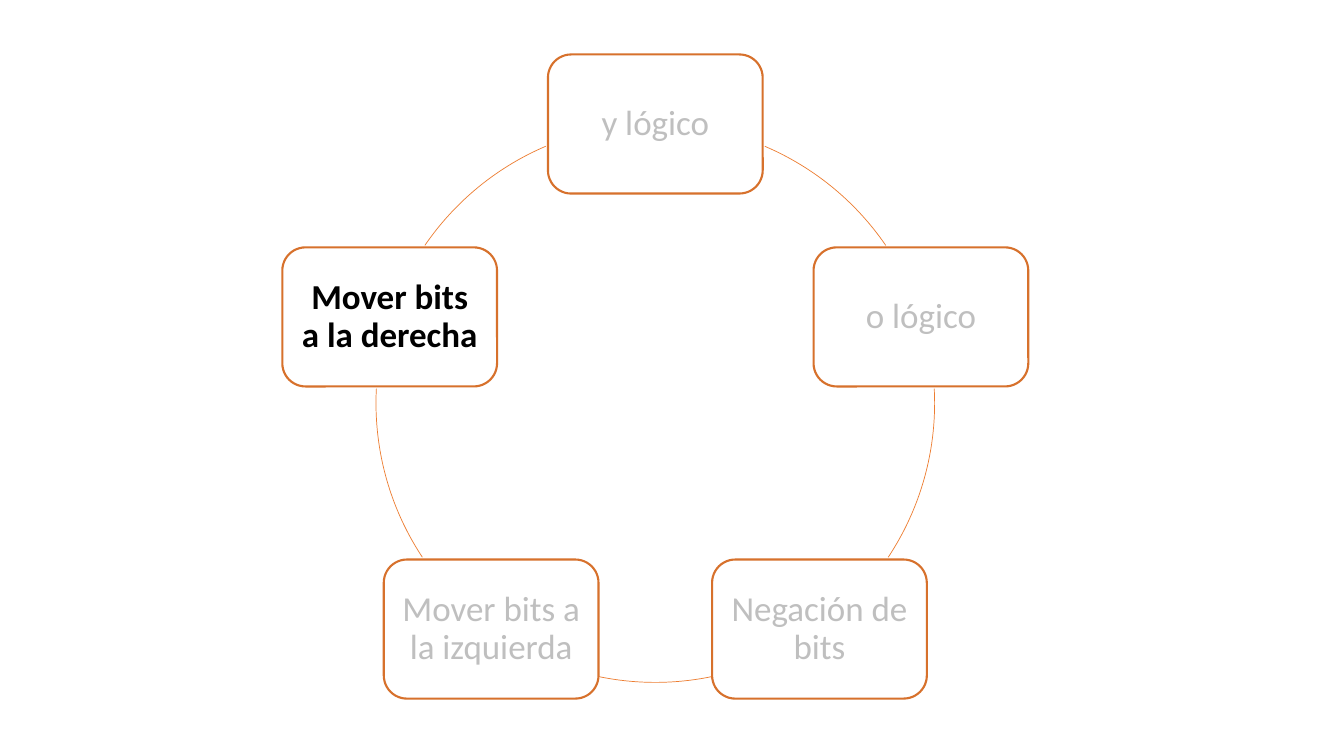
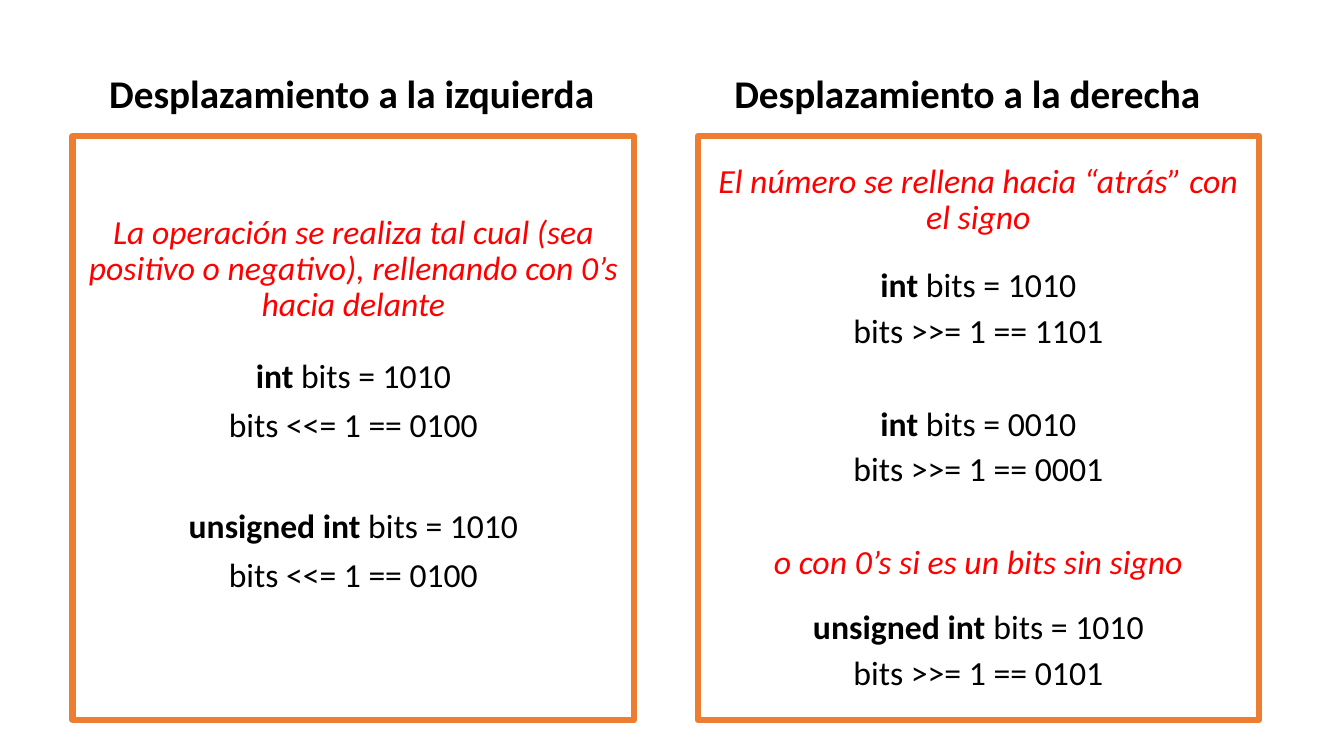
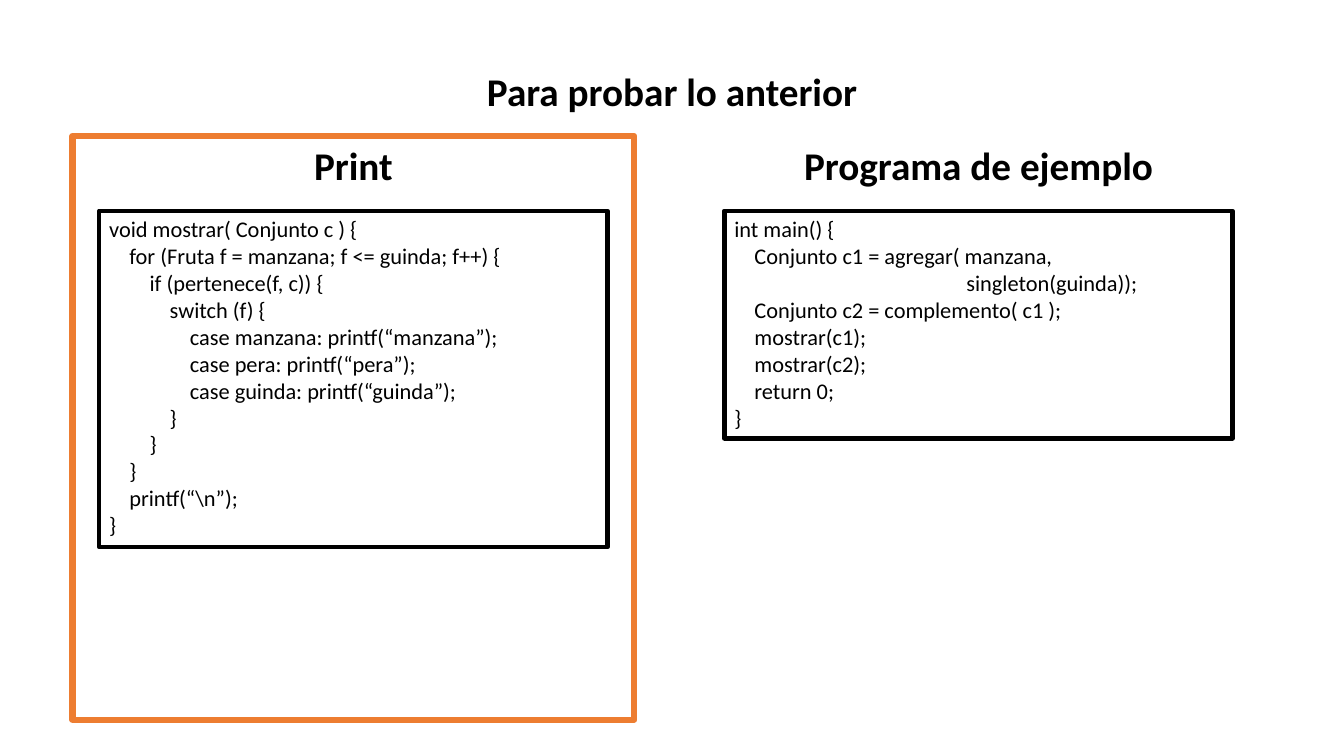
from dataclasses import dataclass
from math import cos, radians, sin
from typing import NamedTuple

from pptx import Presentation
from pptx.dml.color import RGBColor
from pptx.enum.shapes import MSO_SHAPE
from pptx.enum.text import MSO_ANCHOR, MSO_AUTO_SIZE, PP_ALIGN
from pptx.util import Inches, Pt

# Shared style
FONT = "Calibri"
BLACK = RGBColor(0x00, 0x00, 0x00)
WHITE = RGBColor(0xFF, 0xFF, 0xFF)
GREY = RGBColor(0xBF, 0xBF, 0xBF)
RED = RGBColor(0xFF, 0x00, 0x00)
ORANGE = RGBColor(0xED, 0x7D, 0x31)
RUST = RGBColor(0xD7, 0x71, 0x2C)

# Two-column grid, in inches
WIDE, HIGH = 13.33, 7.5
LEFT, PITCH = 0.72, 6.2
PANEL_W, PANEL_H, PANEL_Y = 5.57, 5.79, 1.35
HEAD_W, HEAD_H, HEAD_Y = 5.04, 0.57, 0.64
INSET = (PANEL_W - HEAD_W) / 2
CODE_Y, CODE_ROW = 2.09, 0.27

# Ring of operations
MID_X, MID_Y, RADIUS = 6.5, 4.0, 2.77
NODE_W, NODE_H = 2.13, 1.38


class Rect(NamedTuple):
    x: float
    y: float
    w: float
    h: float

    def emu(self) -> tuple:
        return tuple(Inches(side) for side in self)


class Arc(NamedTuple):
    """Clockwise angles in degrees, counted from the top."""
    start: float
    end: float


@dataclass
class Line:
    """A paragraph: optional bold keyword, then text; red ones are remarks."""
    text: str
    gap: float = 9.5
    key: str = ""
    note: bool = False


@dataclass
class Panel:
    col: int
    head: str
    lines: list[Line]
    size: float
    tight: float
    foot: float


@dataclass
class Code:
    col: int
    head: str
    text: str


NODES = ["y lógico", "o lógico", "Negación de bits",
         "Mover bits a la izquierda", "Mover bits a la derecha"]
ACTIVE = NODES[-1]
ARCS = [Arc(23.1, 55.6), Arc(87, 123.5), Arc(168.4, 191.6),
        Arc(236.5, 273), Arc(304.4, 336.9)]

PANELS = [
    Panel(0, "Desplazamiento a la izquierda", [
        Line("La operación se realiza tal cual (sea positivo o negativo), "
             "rellenando con 0’s hacia delante", 0, note=True),
        Line(" bits = 1010", 25, "int"),
        Line("bits <<= 1 == 0100"),
        Line(" bits = 1010", 46, "unsigned int"),
        Line("bits <<= 1 == 0100"),
    ], 24, 0.9, 0.5),
    Panel(1, "Desplazamiento a la derecha", [
        Line("El número se rellena hacia “atrás” con el signo", 0, note=True),
        Line(" bits = 1010", 25, "int"),
        Line("bits >>= 1 == 1101"),
        Line(" bits = 0010", 43, "int"),
        Line("bits >>= 1 == 0001"),
        Line("o con 0’s si es un bits sin signo", 43, note=True),
        Line(" bits = 1010", 23.5, "unsigned int"),
        Line("bits >>= 1 == 0101"),
    ], 24.1, 0.8, 0.05),
]

CODES = [
    Code(0, "Print", """\
void mostrar( Conjunto c ) {
    for (Fruta f = manzana; f <= guinda; f++) {
        if (pertenece(f, c)) {
            switch (f) {
                case manzana: printf(“manzana”);
                case pera: printf(“pera”);
                case guinda: printf(“guinda”);
            }
        }
    }
    printf(“\\n”);
}"""),
    Code(1, "Programa de ejemplo", """\
int main() {
    Conjunto c1 = agregar( manzana,
                                              singleton(guinda));
    Conjunto c2 = complemento( c1 );
    mostrar(c1);
    mostrar(c2);
    return 0;
}"""),
]


def col_x(col: int) -> float:
    return LEFT + col * PITCH


def style(para, size: float, color: RGBColor, bold: bool | None = None,
          align=PP_ALIGN.CENTER) -> None:
    para.alignment = align
    font = para.font
    font.name, font.size, font.bold = FONT, Pt(size), bold
    font.color.rgb = color


def add_box(slide, kind, rect: Rect, line: RGBColor, width: float,
            fill: RGBColor | None = WHITE):
    box = slide.shapes.add_shape(kind, *rect.emu())
    box.shadow.inherit = False
    if fill is None:
        box.fill.background()
    else:
        box.fill.solid()
        box.fill.fore_color.rgb = fill
    box.line.color.rgb = line
    box.line.width = Pt(width)
    return box


def add_frame(slide, col: int):
    rect = Rect(col_x(col), PANEL_Y, PANEL_W, PANEL_H)
    return add_box(slide, MSO_SHAPE.RECTANGLE, rect, ORANGE, 4.5)


def set_head(shape, text: str, align=PP_ALIGN.CENTER) -> None:
    frame = shape.text_frame
    frame.word_wrap = True
    frame.auto_size = MSO_AUTO_SIZE.NONE
    frame.vertical_anchor = MSO_ANCHOR.TOP
    frame.text = text
    style(frame.paragraphs[0], 28, BLACK, True, align)


def add_head(slide, col: int, y: float, text: str,
             align=PP_ALIGN.CENTER) -> None:
    rect = Rect(col_x(col) + INSET, y, HEAD_W, HEAD_H)
    set_head(slide.shapes.add_textbox(*rect.emu()), text, align)


def add_node(slide, index: int, text: str) -> None:
    turn = radians(index * 360 / len(NODES))
    rect = Rect(MID_X + RADIUS * sin(turn) - NODE_W / 2,
                MID_Y - RADIUS * cos(turn) - NODE_H / 2, NODE_W, NODE_H)
    node = add_box(slide, MSO_SHAPE.ROUNDED_RECTANGLE, rect, RUST, 1.5)
    frame = node.text_frame
    frame.word_wrap = True
    frame.vertical_anchor = MSO_ANCHOR.MIDDLE
    frame.margin_left = frame.margin_right = Inches(0.1)
    frame.margin_top = frame.margin_bottom = Inches(0.1)
    frame.text = text
    para = frame.paragraphs[0]
    para.line_spacing = 0.9
    live = text == ACTIVE
    style(para, 25, BLACK if live else GREY, live)


def add_arc(slide, arc: Arc) -> None:
    rect = Rect(MID_X - RADIUS, MID_Y - RADIUS, 2 * RADIUS, 2 * RADIUS)
    curve = add_box(slide, MSO_SHAPE.ARC, rect, ORANGE, 0.5, None)
    # Preset angles start at three o'clock; 0.6 per degree
    for i, angle in enumerate(arc):
        curve.adjustments[i] = (angle - 90) % 360 * 0.6


def add_panel(slide, panel: Panel) -> None:
    frame = add_frame(slide, panel.col).text_frame
    frame.word_wrap = True
    frame.vertical_anchor = MSO_ANCHOR.MIDDLE
    frame.margin_bottom = Inches(panel.foot)
    for i, line in enumerate(panel.lines):
        para = frame.add_paragraph() if i else frame.paragraphs[0]
        if line.key:
            key = para.add_run()
            key.text, key.font.bold = line.key, True
        para.add_run().text = line.text
        style(para, panel.size, RED if line.note else BLACK)
        para.font.italic = line.note
        para.space_before = Pt(line.gap)
        para.line_spacing = panel.tight if i else 0.9
    add_head(slide, panel.col, HEAD_Y, panel.head, PP_ALIGN.LEFT)


def add_code(slide, code: Code) -> None:
    add_head(slide, code.col, PANEL_Y, code.head)
    rows = code.text.split("\n")
    rect = Rect(col_x(code.col) + INSET, CODE_Y, HEAD_W,
                len(rows) * CODE_ROW + 0.1)
    box = add_box(slide, MSO_SHAPE.RECTANGLE, rect, BLACK, 3, None)
    frame = box.text_frame
    frame.word_wrap = True
    frame.vertical_anchor = MSO_ANCHOR.TOP
    frame.text = code.text
    for para in frame.paragraphs:
        style(para, 16, BLACK, align=PP_ALIGN.LEFT)


def main() -> None:
    deck = Presentation()
    deck.slide_width, deck.slide_height = Inches(WIDE), Inches(HIGH)
    titled, blank = deck.slide_layouts[5], deck.slide_layouts[6]

    # Ring of bit operations
    ring = deck.slides.add_slide(blank)
    for i, (text, arc) in enumerate(zip(NODES, ARCS)):
        add_node(ring, i, text)
        add_arc(ring, arc)

    # Left and right shifts
    shifts = deck.slides.add_slide(blank)
    for panel in PANELS:
        add_panel(shifts, panel)

    # Test code
    test = deck.slides.add_slide(titled)
    title = test.shapes.title
    rect = Rect((WIDE - HEAD_W) / 2, 0.62, HEAD_W, HEAD_H)
    title.left, title.top, title.width, title.height = rect.emu()
    set_head(title, "Para probar lo anterior")
    add_frame(test, 0)
    for code in CODES:
        add_code(test, code)

    deck.save("out.pptx")


if __name__ == "__main__":
    main()
